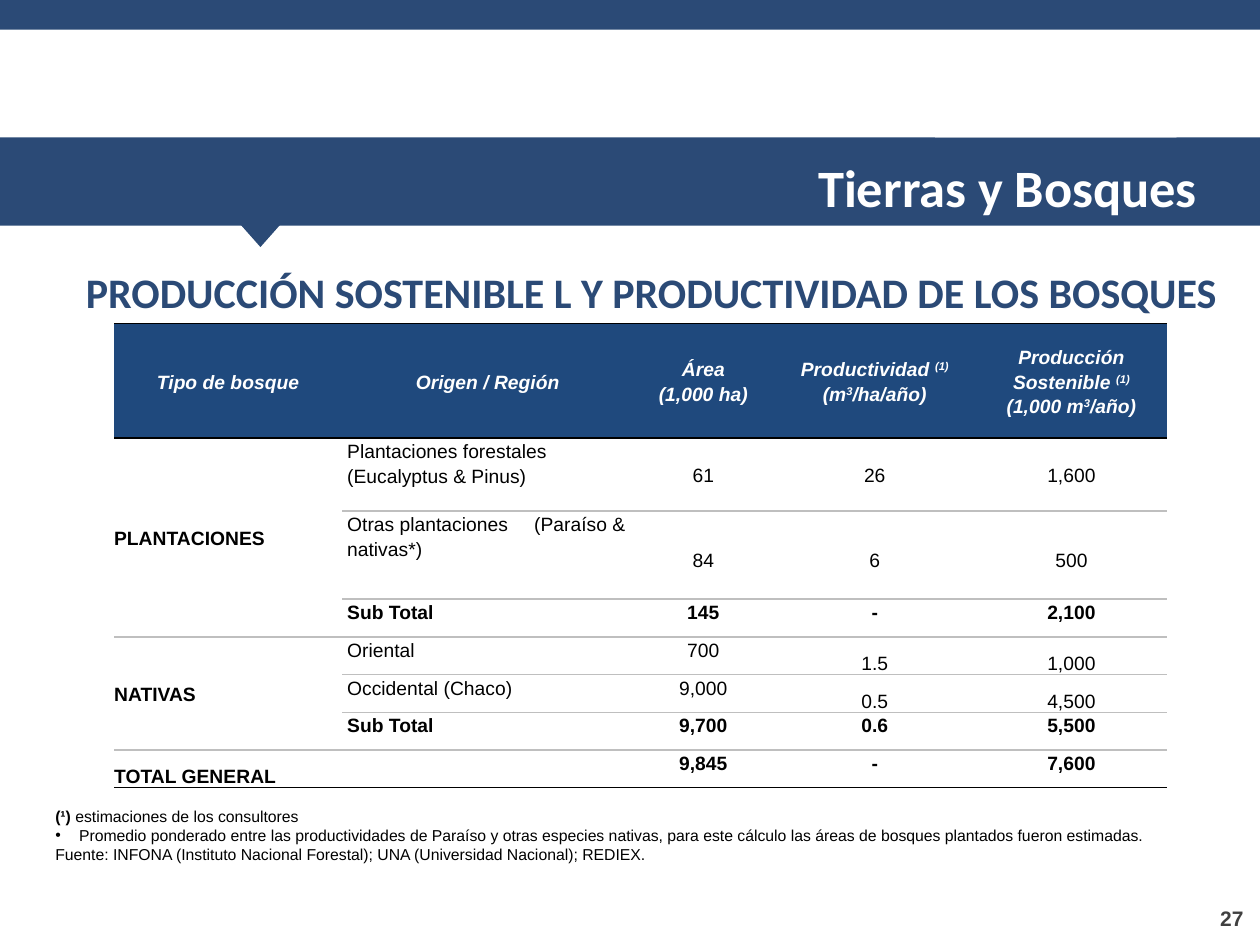
"""Build the slide on sustainable production and productivity of forests."""
from lxml.etree import SubElement
from pptx import Presentation
from pptx.dml.color import RGBColor
from pptx.enum.shapes import MSO_SHAPE
from pptx.enum.text import MSO_ANCHOR, MSO_AUTO_SIZE, PP_ALIGN
from pptx.oxml.ns import qn
from pptx.util import Cm, Pt

NAVY = RGBColor(0x2B, 0x4A, 0x76)
HEADER_BLUE = RGBColor(0x1F, 0x49, 0x7D)
RULE_GRAY = RGBColor(0xBF, 0xBF, 0xBF)
DARK_GRAY = RGBColor(0x40, 0x40, 0x40)
WHITE = RGBColor(0xFF, 0xFF, 0xFF)
BLACK = RGBColor(0, 0, 0)

TITLE = "Tierras y Bosques"
HEADING = "PRODUCCIÓN SOSTENIBLE L Y PRODUCTIVIDAD DE LOS BOSQUES"
PAGE = "27"
FOREST_TABLE = [
    ("Tipo de bosque", "Origen / Región", "Área\n(1,000 ha)",
     "Productividad ^(1)^\n(m^3^/ha/año)",
     "Producción Sostenible ^(1)^\n(1,000 m^3^/año)"),
    ("PLANTACIONES", "Plantaciones forestales (Eucalyptus & Pinus)", "61", "26", "1,600"),
    ("", "Otras plantaciones\t(Paraíso & nativas*)", "84", "6", "500"),
    ("", "Sub Total", "145", "-", "2,100"),
    ("NATIVAS", "Oriental", "700", "1.5", "1,000"),
    ("", "Occidental (Chaco)", "9,000", "0.5", "4,500"),
    ("", "Sub Total", "9,700", "0.6", "5,500"),
    ("TOTAL GENERAL", "", "9,845", "-", "7,600"),
]
FOOTNOTES = [
    ("(¹)", " estimaciones de los consultores", False),
    ("", "Promedio ponderado entre las productividades de Paraíso y otras especies nativas, "
     "para este cálculo las áreas de bosques plantados fueron estimadas.", True),
    ("", "Fuente: INFONA (Instituto Nacional Forestal); UNA (Universidad Nacional); REDIEX.", False),
]
DECORATION = [
    (MSO_SHAPE.RECTANGLE, (13.23, 0.76, 7.01, 0.64), WHITE, 0),
    (MSO_SHAPE.RECTANGLE, (0, 0, 25.4, 0.6), NAVY, 0),
    (MSO_SHAPE.RECTANGLE, (0, 2.77, 25.4, 1.78), NAVY, 0),
    (MSO_SHAPE.PENTAGON, (18.85, 1.78, 5.36, 0.99), WHITE, 0),
    (MSO_SHAPE.ISOSCELES_TRIANGLE, (4.55, 4.19, 1.4, 0.79), NAVY, 180),
]
COLUMN_WIDTHS = [4.6, 5.87, 2.82, 4.09, 3.84]
ROW_HEIGHTS = [2.31, 1.47, 1.78] + [0.76] * 5
MERGED_ROWS = [(1, 3), (4, 6)]
LAST_ROW = len(FOREST_TABLE) - 1


def format_run(run, size, color, bold=True, italic=False, name="Arial"):
    font = run.font
    font.name, font.size, font.bold, font.italic = name, Pt(size), bold, italic
    font.color.rgb = color


def place(part, left, top, width, height):
    part.left, part.top, part.width, part.height = map(Cm, (left, top, width, height))


def write_line(part, text, size, color, align, name):
    frame = part.text_frame
    frame.text = text
    frame.word_wrap = True
    frame.auto_size = MSO_AUTO_SIZE.NONE
    frame.vertical_anchor = MSO_ANCHOR.TOP
    frame.paragraphs[0].alignment = align
    format_run(frame.paragraphs[0].runs[0], size, color, name=name)
    return frame


def write_marked(paragraph, marked):
    for index, piece in enumerate(marked.split("^")):
        for line_number, line in enumerate(piece.split("\n")):
            if line_number:
                paragraph.add_line_break()
            if line:
                run = paragraph.add_run()
                run.text = line
                if index % 2:
                    run.font._element.set("baseline", "30000")


def draw_borders(cell, top, bottom):
    properties = cell._tc.get_or_add_tcPr()
    edges = [("lnL", None), ("lnR", None), ("lnT", top), ("lnB", bottom)]
    for position, (edge, color) in enumerate(edges):
        line = properties.makeelement(qn("a:" + edge), {"w": "12700"})
        properties.insert(position, line)
        if color is None:
            SubElement(line, qn("a:noFill"))
        else:
            fill = SubElement(line, qn("a:solidFill"))
            SubElement(fill, qn("a:srgbClr"), val=str(color))


def cell_anchor(row, column):
    if row < 2 and column != 1 or column == 0 and row < LAST_ROW or row == 0:
        return MSO_ANCHOR.MIDDLE
    if row in (4, 5) and column > 2 or row == LAST_ROW and column == 0:
        return MSO_ANCHOR.BOTTOM
    return MSO_ANCHOR.TOP


def fill_cell(cell, row, column, text):
    header = row == 0
    cell.margin_left = cell.margin_right = cell.margin_top = cell.margin_bottom = 0
    if row == 2 and column > 1:
        cell.margin_top = Cm(0.72)
    cell.vertical_anchor = cell_anchor(row, column)
    if header:
        cell.fill.solid()
        cell.fill.fore_color.rgb = HEADER_BLUE
    else:
        cell.fill.background()
    if cell.is_spanned:
        draw_borders(cell, None, None)
    else:
        draw_borders(cell, BLACK if row < 2 else RULE_GRAY,
                     BLACK if row in (0, LAST_ROW) else RULE_GRAY)
    paragraph = cell.text_frame.paragraphs[0]
    if not text:
        SubElement(paragraph._p, qn("a:endParaRPr"), sz="1100")
        return
    paragraph.line_spacing = 1.15
    paragraph.space_after = Pt(3)
    paragraph.alignment = PP_ALIGN.CENTER if header or column > 1 else PP_ALIGN.LEFT
    properties = paragraph._p.get_or_add_pPr()
    if column == 1 and not header:
        properties.set("marL", str(Cm(0.1)))
    if "\t" in text:
        tabs = SubElement(properties, qn("a:tabLst"))
        SubElement(tabs, qn("a:tab"), pos=str(Cm(3.77)), algn="l")
    write_marked(paragraph, text)
    bold = header or column == 0 or row == LAST_ROW or FOREST_TABLE[row][1] == "Sub Total"
    for run in paragraph.runs:
        format_run(run, 11, WHITE if header else BLACK, bold, header)


def add_forest_table(slide):
    table = slide.shapes.add_table(
        len(ROW_HEIGHTS), len(COLUMN_WIDTHS), Cm(2.3), Cm(6.52),
        Cm(sum(COLUMN_WIDTHS)), Cm(sum(ROW_HEIGHTS))).table
    table.first_row = table.horz_banding = False
    for column, width in zip(table.columns, COLUMN_WIDTHS):
        column.width = Cm(width)
    for row, height in zip(table.rows, ROW_HEIGHTS):
        row.height = Cm(height)
    for first, last in MERGED_ROWS:
        table.cell(first, 0).merge(table.cell(last, 0))
    for row, values in enumerate(FOREST_TABLE):
        for column, text in enumerate(values):
            fill_cell(table.cell(row, column), row, column, text)


def write_footnotes(body):
    place(body, 0.86, 16.13, 22.63, 1.42)
    frame = body.text_frame
    frame.word_wrap = True
    frame.auto_size = MSO_AUTO_SIZE.NONE
    frame.vertical_anchor = MSO_ANCHOR.MIDDLE
    for index, (mark, note, bulleted) in enumerate(FOOTNOTES):
        paragraph = frame.add_paragraph() if index else frame.paragraphs[0]
        paragraph.alignment = PP_ALIGN.JUSTIFY
        paragraph.space_before = Pt(0)
        properties = paragraph._p.get_or_add_pPr()
        indent = Cm(0.48) if bulleted else 0
        properties.set("marL", str(indent))
        properties.set("indent", str(-indent))
        if bulleted:
            SubElement(properties, qn("a:buChar"), char="•")
        else:
            SubElement(properties, qn("a:buNone"))
        for text, bold in ((mark, True), (note, False)):
            if text:
                run = paragraph.add_run()
                run.text = text
                format_run(run, 9, BLACK, bold)


def main():
    deck = Presentation()
    deck.slide_width, deck.slide_height = Cm(25.4), Cm(19.05)
    slide = deck.slides.add_slide(deck.slide_layouts[1])
    title, footnotes = slide.placeholders
    for kind, box, color, rotation in DECORATION:
        decoration = slide.shapes.add_shape(kind, *map(Cm, box))
        decoration.shadow.inherit = False
        decoration.fill.solid()
        decoration.fill.fore_color.rgb = color
        decoration.line.fill.background()
        decoration.rotation = rotation
    decoration.element.addnext(title.element)
    place(title, 6.71, 2.99, 17.93, 1.78)
    write_line(title, TITLE, 30, WHITE, PP_ALIGN.RIGHT, "Calibri").margin_right = Cm(0.5)
    heading = slide.shapes.add_textbox(Cm(0.99), Cm(5.25), Cm(24.1), Cm(1.27))
    write_line(heading, HEADING, 24, NAVY, PP_ALIGN.LEFT, "Calibri").margin_left = Cm(0.74)
    add_forest_table(slide)
    write_footnotes(footnotes)
    page = slide.shapes.add_textbox(Cm(21.11), Cm(18.14), Cm(4.34), Cm(0.76))
    write_line(page, PAGE, 12, DARK_GRAY, PP_ALIGN.RIGHT, "Arial").margin_right = Cm(0.38)
    deck.save("out.pptx")


if __name__ == "__main__":
    main()
